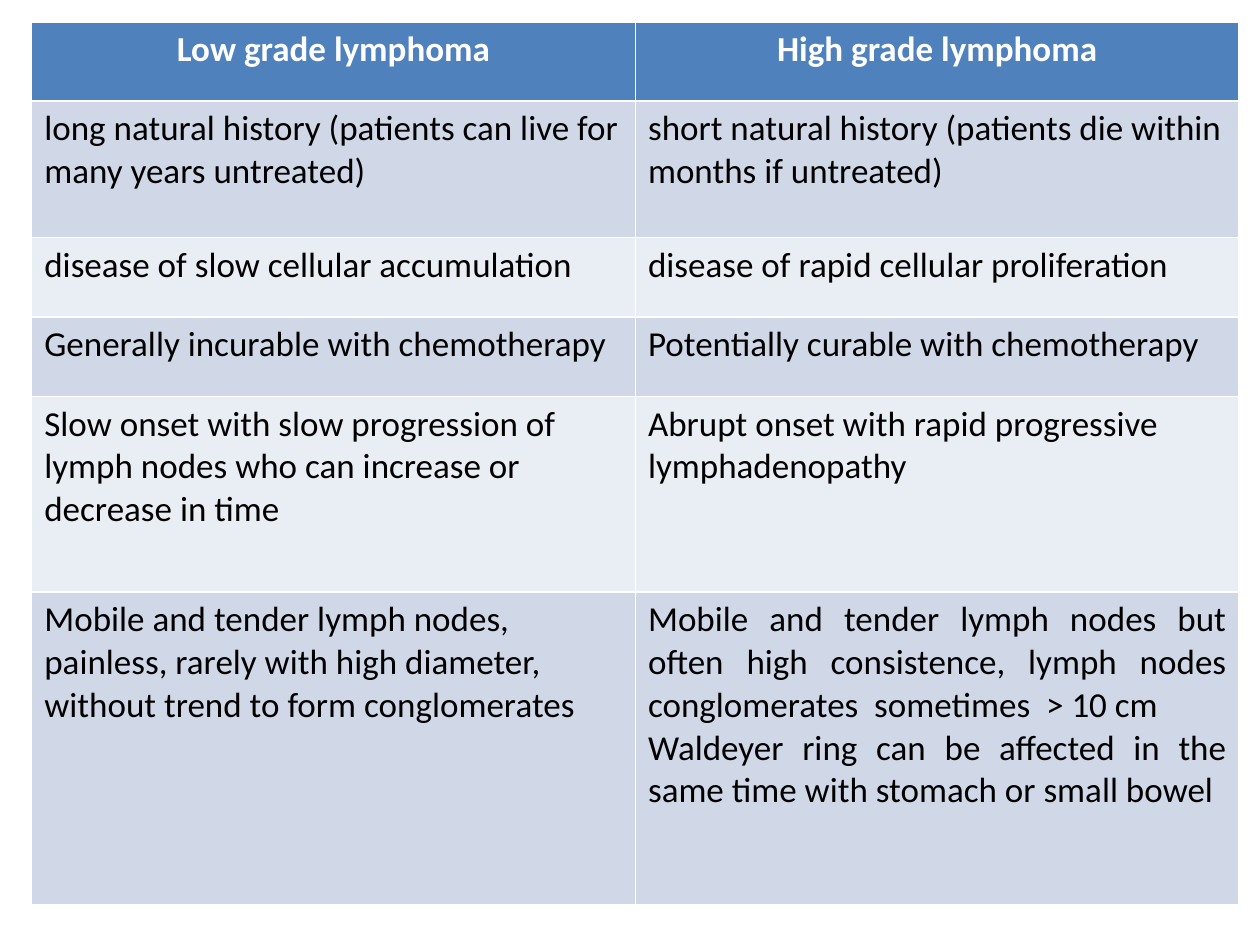
from pptx import Presentation
from pptx.dml.color import RGBColor
from pptx.enum.text import PP_ALIGN
from pptx.util import Cm, Pt

WHITE = RGBColor(0xFF, 0xFF, 0xFF)
BLACK = RGBColor(0x00, 0x00, 0x00)
HEADER_BLUE = RGBColor(0x4F, 0x81, 0xBD)
BAND_DARK = RGBColor(0xD0, 0xD8, 0xE8)
BAND_LIGHT = RGBColor(0xE9, 0xED, 0xF4)

# Row height in cm, low grade text, high grade text
ROWS = [
    (1.6, "Low grade lymphoma", "High grade lymphoma"),
    (2.75, "long natural history (patients can live for many years untreated)",
     "short natural history (patients die within months if untreated)"),
    (1.6, "disease of slow cellular accumulation",
     "disease of rapid cellular proliferation"),
    (1.6, "Generally incurable with chemotherapy",
     "Potentially curable with chemotherapy"),
    (3.94, "Slow onset with slow progression of lymph nodes who can increase or "
     "decrease in time",
     "Abrupt onset with rapid progressive lymphadenopathy"),
    (6.3, "Mobile and tender lymph nodes, painless, rarely with high diameter, "
     "without trend to form conglomerates",
     "Mobile and tender lymph nodes but often high consistence, lymph nodes "
     "conglomerates  sometimes  > 10 cm \n"
     "Waldeyer ring can be affected in the same time with stomach or small bowel"),
]


def write_cell(cell, text, fill, color=BLACK, bold=False, align=PP_ALIGN.LEFT):
    cell.fill.solid()
    cell.fill.fore_color.rgb = fill
    cell.text = text
    for para in cell.text_frame.paragraphs:
        para.alignment = align
        for span in para.runs:
            span.font.name = "Calibri"
            span.font.size = Pt(20)
            span.font.bold = bold
            span.font.color.rgb = color


deck = Presentation()
deck.slide_width, deck.slide_height = Cm(25.4), Cm(19.05)
page = deck.slides.add_slide(deck.slide_layouts[6])

# The default table style supplies the white rules between the cells
total_height = sum(height for height, *_ in ROWS)
table = page.shapes.add_table(len(ROWS), 2, Cm(0.64), Cm(0.44),
                              Cm(24.34), Cm(total_height)).table

for index, (height, *texts) in enumerate(ROWS):
    table.rows[index].height = Cm(height)
    for cell, text in zip(table.rows[index].cells, texts):
        if index == 0:
            write_cell(cell, text, HEADER_BLUE, color=WHITE, bold=True,
                       align=PP_ALIGN.CENTER)
        else:
            write_cell(cell, text, BAND_DARK if index % 2 else BAND_LIGHT)

for para in table.cell(len(ROWS) - 1, 1).text_frame.paragraphs:
    para.alignment = PP_ALIGN.JUSTIFY

deck.save("out.pptx")
